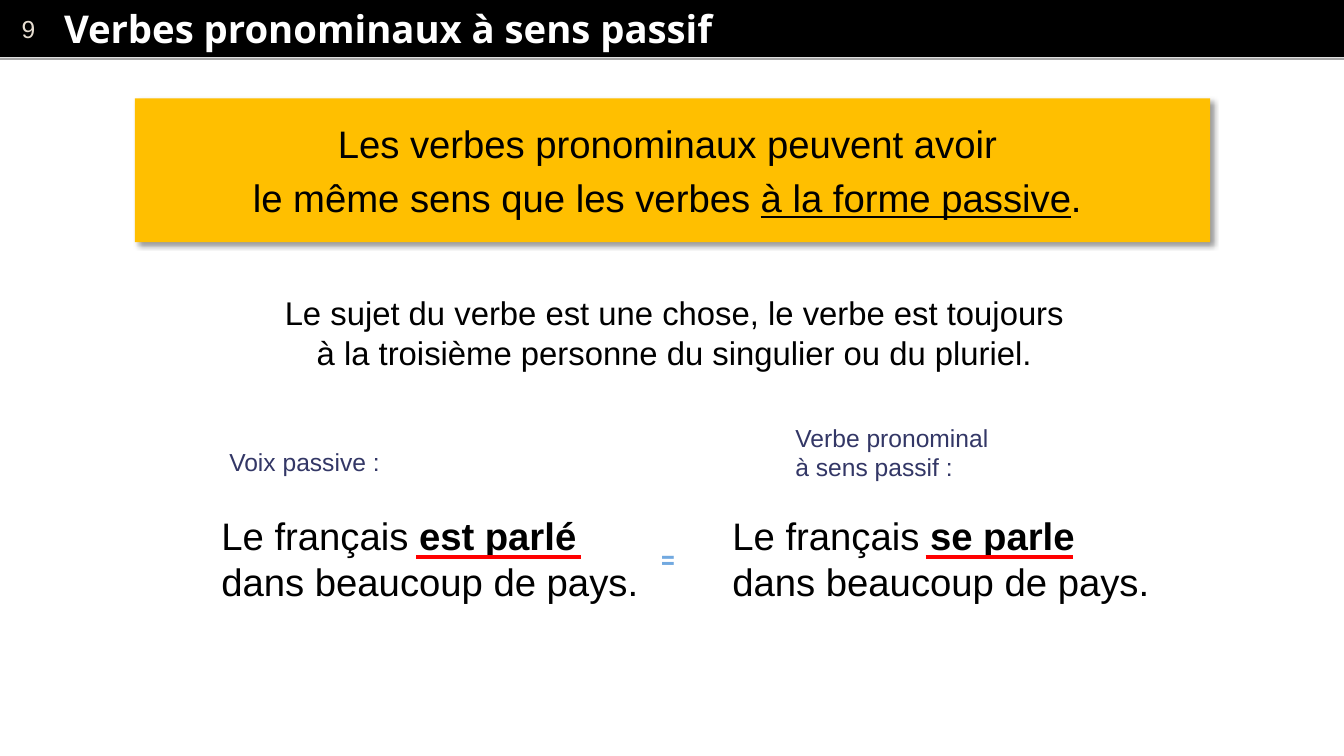
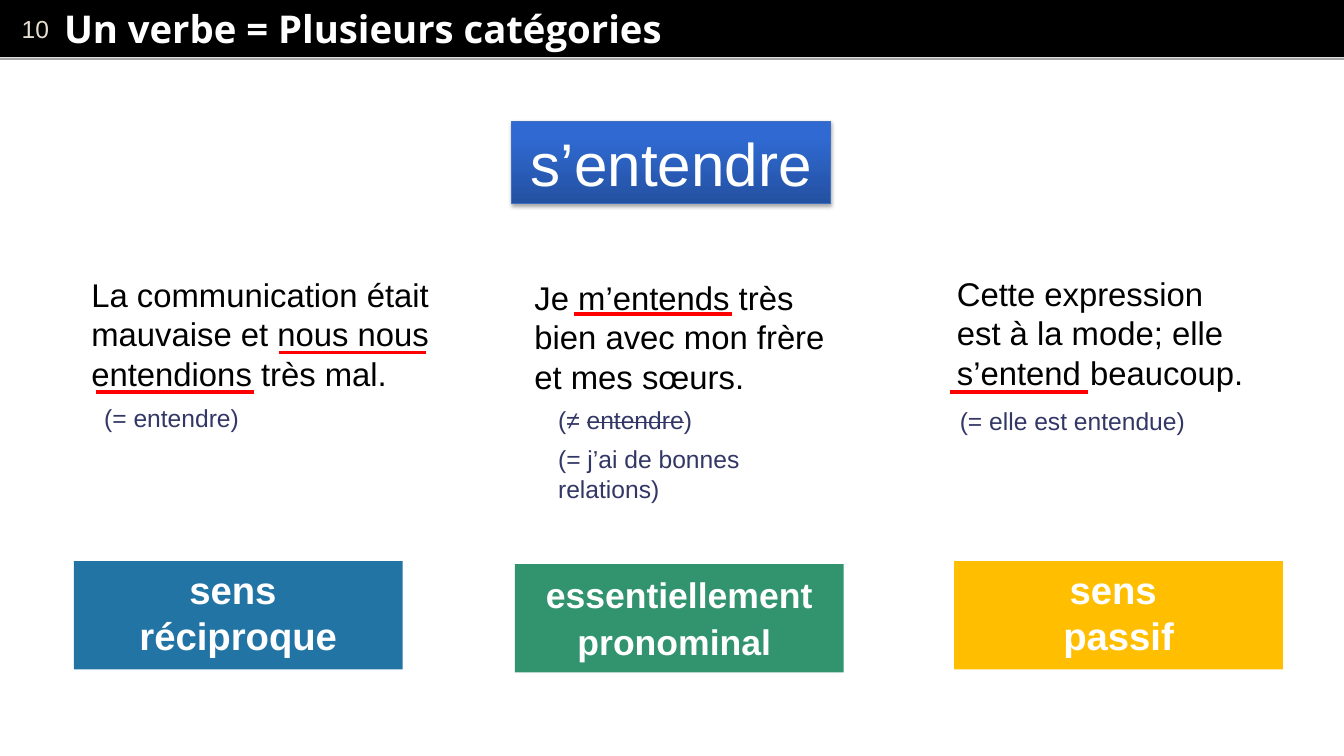
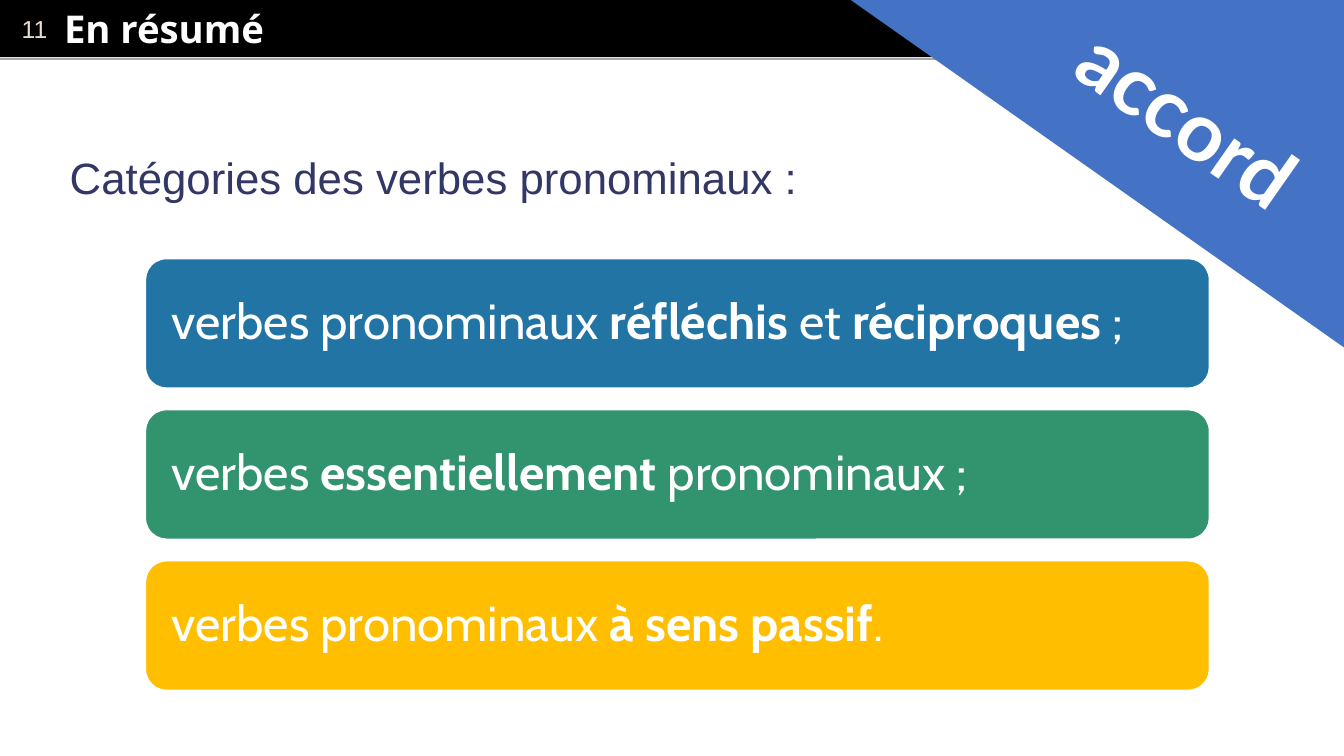
from pptx import Presentation
from pptx.dml.color import RGBColor
from pptx.enum.shapes import MSO_CONNECTOR, MSO_SHAPE
from pptx.enum.text import MSO_ANCHOR, PP_ALIGN
from pptx.oxml import parse_xml
from pptx.oxml.ns import nsdecls, qn
from pptx.util import Inches, Pt

HUES = {"black": "000000", "white": "FFFFFF", "gray": "A6A6A6", "sand": "E7DED1",
        "navy": "333766", "red": "FF0000", "sky": "72A9E0", "blue": "2274A5",
        "green": "32936F", "gold": "FFBF00", "royal": "4472C4", "edge": "3F6FC3",
        "deep": "2451A1", "bright": "2F69D1"}
INK = {name: RGBColor.from_string(code) for name, code in HUES.items()}
WIDTH, HEIGHT = 13.65, 7.68
MID, TOP = MSO_ANCHOR.MIDDLE, MSO_ANCHOR.TOP


def put(slide, at, text, size, ink="black", fill=None, form=MSO_SHAPE.RECTANGLE,
        font="Arial", mark="bold", bold=None, mid=False, anchor=TOP, inset=(0.1, 0.05)):
    """Add a box of text: \\n parts paragraphs, \\v breaks lines, |...| gets the mark."""
    at = [Inches(n) for n in at]
    if fill:
        box = slide.shapes.add_shape(form, *at)
        box.shadow.inherit = False
        box.fill.solid()
        box.fill.fore_color.rgb = INK[fill]
        box.line.fill.background()
    else:
        box = slide.shapes.add_textbox(*at)
    frame = box.text_frame
    frame.word_wrap = True
    frame.vertical_anchor = anchor
    frame.margin_left = frame.margin_right = Inches(inset[0])
    frame.margin_top = frame.margin_bottom = Inches(inset[1])
    for i, words in enumerate(text.split("\n")):
        para = frame.add_paragraph() if i else frame.paragraphs[0]
        para.alignment = PP_ALIGN.CENTER if mid else PP_ALIGN.LEFT
        for j, part in enumerate(words.split("|")):
            for k, line in enumerate(part.split("\v")):
                if k:
                    para.add_line_break()
                if not line:
                    continue
                run = para.add_run()
                run.text = line
                run.font.name, run.font.size, run.font.bold = font, Pt(size), bold
                run.font.color.rgb = INK[ink]
                if j % 2 and mark == "strike":
                    run.font._element.set("strike", "sngStrike")
                elif j % 2:
                    setattr(run.font, mark, True)
    return box


def rule(slide, left, right, y, ink="red", width=2.75):
    """Add a level line."""
    line = slide.shapes.add_connector(MSO_CONNECTOR.STRAIGHT, Inches(left), Inches(y),
                                      Inches(right), Inches(y))
    line.line.color.rgb = INK[ink]
    line.line.width = Pt(width)
    line._element.spPr.append(parse_xml(f"<a:effectLst {nsdecls('a')}/>"))


deck = Presentation()
deck.slide_width, deck.slide_height = Inches(WIDTH), Inches(HEIGHT)

# Shared header: band, number, line and title
titles = ["Verbes pronominaux à sens passif", "Un verbe = Plusieurs catégories", "En résumé"]
for num, title in enumerate(titles, 9):
    slide = deck.slides.add_slide(deck.slide_layouts[6])
    put(slide, (0, 0, WIDTH, 0.58), str(num), 18, "sand", "black", anchor=MID,
        inset=(0.22, 0.05))
    rule(slide, 0, WIDTH, 0.6, "gray", 2)
    put(slide, (0.61, 0.01, 12.85, 0.56), title, 28, "white", font="Open Sans",
        bold=True, anchor=MID, inset=(0.04, 0.04))
passive, senses, recap = deck.slides

# Passive meaning: the rule
banner = put(passive, (1.37, 1, 10.92, 1.46),
             "Les verbes pronominaux peuvent avoir \n"
             "le même sens que les verbes |à la forme passive|. ",
             28, fill="gold", mark="underline", mid=True, anchor=MID)
banner.text_frame.paragraphs[1].space_before = Pt(6.5)
put(passive, (2.56, 2.92, 8.67, 0.91),
    "Le sujet du verbe est une chose, le verbe est toujours \v"
    "à la troisième personne du singulier ou du pluriel. ", 24, mid=True, anchor=MID)

# Passive meaning: two equal phrasings
put(passive, (2.23, 4.49, 1.81, 0.4), "Voix passive :", 18, "navy", anchor=MID)
put(passive, (7.98, 4.24, 2.25, 0.71), "Verbe pronominal\nà sens passif :", 18, "navy",
    anchor=MID)
for left, verb in [(2.15, "est parlé"), (7.34, "se parle")]:
    put(passive, (left, 5.16, 4.56, 1.03),
        f"Le français |{verb} |\vdans beaucoup de pays.", 28, anchor=MID)
put(passive, (6.61, 5.49, 0.58, 0.25), "=", 18, "sky", font="Montserrat", bold=True)
for left, right in [(4.23, 5.9), (9.4, 10.9)]:
    rule(passive, left, right, 5.66)

# One verb: the headword
word = put(senses, (5.2, 1.23, 3.24, 0.84), "s’entendre", 44, "white", "royal", mid=True)
word.line.color.rgb = INK["edge"]
word.line.width = Pt(0.75)
word.fill.gradient()
word.fill.gradient_angle = 90
for stop, name, spot in zip(word.fill.gradient_stops, ["deep", "bright"], [0, 0.8]):
    stop.color.rgb = INK[name]
    stop.position = spot

# One verb: an example for each sense
samples = [
    (0.83, 2.74, 3.67, "La communication était mauvaise et nous nous entendions très mal."),
    (5.33, 2.77, 3.34, "Je m’entends très bien avec mon frère et mes sœurs."),
    (9.62, 2.73, 3.12, "Cette expression est à la mode; elle s’entend beaucoup."),
]
for left, top, width, text in samples:
    put(senses, (left, top, width, 1.31), text, 24)
glosses = [
    (0.96, 4.04, 1.7, 0.4, "(= entendre)"),
    (5.57, 4.06, 1.86, 0.4, "(≠ |entendre|)"),
    (5.57, 4.46, 2.51, 0.71, "(= j’ai de bonnes \vrelations)"),
    (9.65, 4.07, 2.87, 0.4, "(= elle est entendue)"),
]
for *at, text in glosses:
    put(senses, at, text, 18, "navy", mark="strike")
for left, right, y in [(2.83, 4.33, 3.58), (0.98, 2.58, 3.98), (5.83, 7.43, 3.19),
                       (9.65, 11.05, 3.98)]:
    rule(senses, left, right, y)

# One verb: names of the senses
labels = [
    (0.75, 5.7, "sens \nréciproque", 28, "blue", None),
    (5.23, 5.73, "essentiellement pronominal ", 26, "green", Pt(34.2)),
    (9.69, 5.7, "sens \npassif", 28, "gold", None),
]
for left, top, text, size, fill, gap in labels:
    label = put(senses, (left, top, 3.34, 1.1), text, size, "white", fill, bold=True,
                mid=True)
    label.text_frame.paragraphs[0].line_spacing = gap

# Recap: list of kinds
kinds = [
    ("verbes pronominaux |réfléchis| et |réciproques| ;", "blue"),
    ("verbes |essentiellement| pronominaux ;", "green"),
    ("verbes pronominaux |à sens passif|.", "gold"),
]
for i, (text, fill) in enumerate(kinds):
    bar = put(recap, (1.47, 2.62 + 1.535 * i, 10.82, 1.33), text, 36, "white", fill,
              MSO_SHAPE.ROUNDED_RECTANGLE, "Cabin", anchor=MID, inset=(0.21, 0.15))
    bar.line.color.rgb = INK["white"]
    bar.line.width = Pt(2)
    bar.text_frame.paragraphs[0].line_spacing = 0.9
put(recap, (0.61, 1.48, 8.5, 0.64), "Catégories des verbes pronominaux :", 32, "navy")

# Recap: corner flag
pen = recap.shapes.build_freeform(Inches(8.64), 0)
pen.add_line_segments([(Inches(WIDTH), 0), (Inches(WIDTH), Inches(3.53))])
flag = pen.convert_to_shape()
flag.shadow.inherit = False
flag.fill.solid()
flag.fill.fore_color.rgb = INK["royal"]
flag.line.fill.background()
accord = put(recap, (9.7, 0.98, 4.51, 0.76), "accord", 60, "white", font="Lato",
             bold=True, mid=True)
accord.rotation = 35
head = accord.text_frame.paragraphs[0]
head.line_spacing = Pt(45)

# Soft shadows: opacity, blur, distance, angle
glow = parse_xml(f"<a:effectLst {nsdecls('a')}/>")
head.runs[0].font._element.find(qn("a:solidFill")).addnext(glow)
effects = [box._element.spPr.find(qn("a:effectLst")) for box in (banner, word)] + [glow]
for effect, (alpha, blur, dist, turn) in zip(
        effects, [(40, 4, 3, 45), (35, 3.1, 1.8, 90), (40, 4, 3, 90)]):
    effect.append(parse_xml(
        f'<a:outerShdw {nsdecls("a")} blurRad="{Pt(blur)}" dist="{Pt(dist)}" '
        f'dir="{turn * 60000}" rotWithShape="0"><a:srgbClr val="{HUES["black"]}">'
        f'<a:alpha val="{alpha * 1000}"/></a:srgbClr></a:outerShdw>'))

deck.save("out.pptx")
